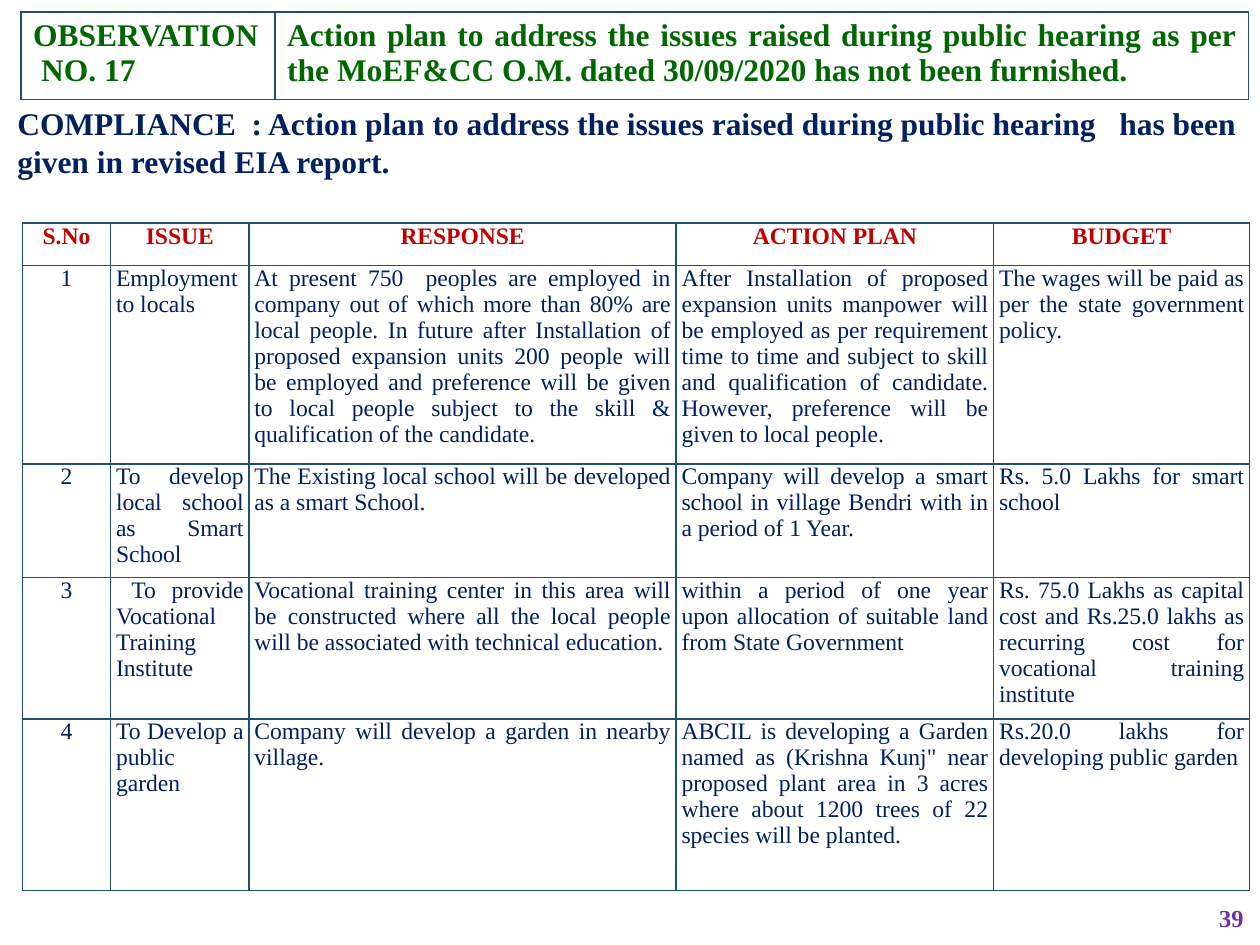
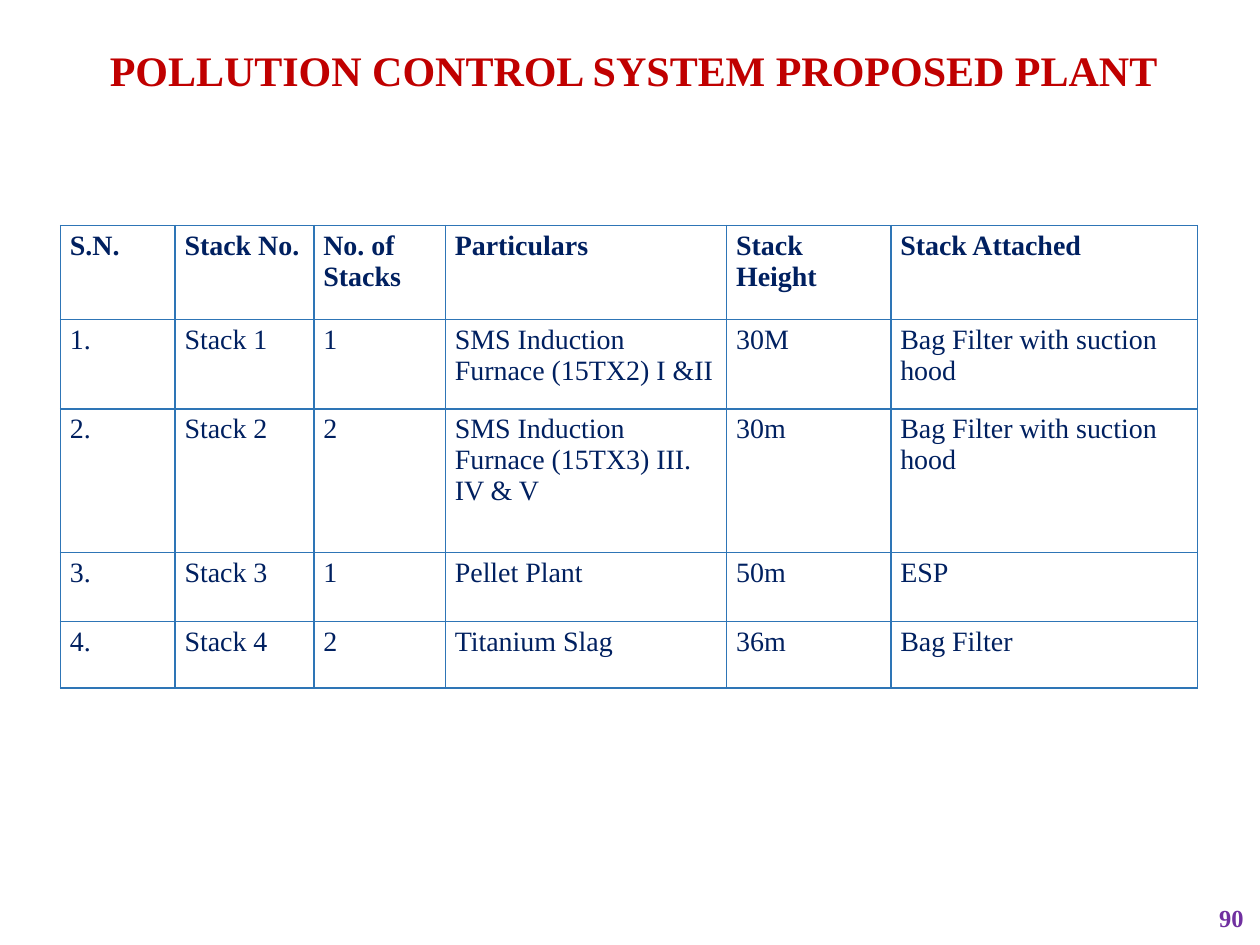
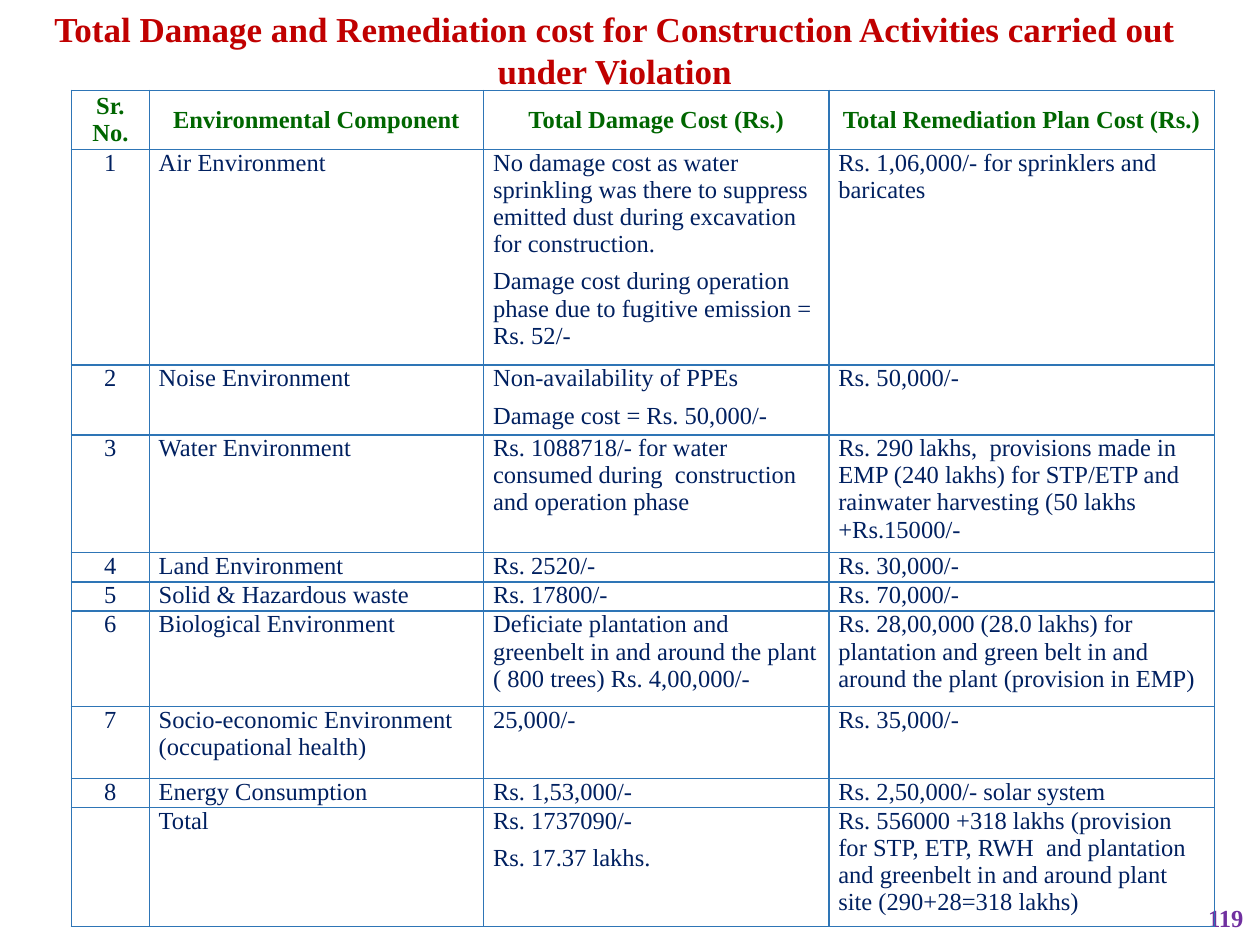
"""Build three slides of an environmental review deck."""
from lxml import etree
from pptx import Presentation
from pptx import util as u
from pptx.dml.color import RGBColor
from pptx.enum import text
from pptx.oxml import ns

FONT = "Times New Roman"
RED = RGBColor(0xC0, 0x00, 0x00)
NAVY = RGBColor(0x00, 0x20, 0x60)
GREEN = RGBColor(0x00, 0x66, 0x00)
PURPLE = RGBColor(0x70, 0x30, 0xA0)
DARK = RGBColor(0x1F, 0x4E, 0x79)
BLUE = RGBColor(0x2E, 0x75, 0xB6)

LEFT = text.PP_ALIGN.LEFT
MID = text.PP_ALIGN.CENTER
RIGHT = text.PP_ALIGN.RIGHT
FULL = text.PP_ALIGN.JUSTIFY

ISSUES = [
    ["S.No", "ISSUE", "RESPONSE", "ACTION PLAN", "BUDGET"],
    ["1", "Employment to locals",
     "At present 750  peoples are employed in company out of which more than 80% are local people. "
     "In future after Installation of proposed expansion units 200 people will be employed and "
     "preference will be given to local people subject to the skill & qualification of the candidate.",
     "After Installation of proposed expansion units manpower will be employed as per requirement "
     "time to time and subject to skill and qualification of candidate. However, preference will be "
     "given to local people.",
     "The wages will be paid as per the state government policy."],
    ["2", "To develop local school as Smart School",
     "The Existing local school will be developed as a smart School.",
     "Company will develop a smart school in village Bendri with in a period of 1 Year.",
     "Rs. 5.0 Lakhs for smart school"],
    ["3", " To provide Vocational Training Institute",
     "Vocational training center in this area will be constructed where all the local people will be "
     "associated with technical education.",
     "within a period of one year upon allocation of suitable land from State Government",
     "Rs. 75.0 Lakhs as capital cost and Rs.25.0 lakhs as recurring cost for vocational training "
     "institute"],
    ["4", "To Develop a public garden",
     "Company will develop a garden in nearby village.",
     "ABCIL is developing a Garden named as (Krishna Kunj\" near proposed plant area in 3 acres where "
     "about 1200 trees of 22 species will be planted.",
     "Rs.20.0 lakhs for developing public garden"],
]

STACKS = [
    ["S.N.", "Stack No.", "No. of Stacks", "Particulars", "Stack Height", "Stack Attached"],
    ["1.", "Stack 1", "1", "SMS Induction Furnace (15TX2) I &II", "30M",
     "Bag Filter with suction hood"],
    ["2.", "Stack 2", "2", "SMS Induction Furnace (15TX3) III. IV & V", "30m",
     "Bag Filter with suction hood"],
    ["3.", "Stack 3", "1", "Pellet Plant", "50m", "ESP"],
    ["4.", "Stack 4", "2", "Titanium Slag", "36m", "Bag Filter"],
]

COSTS = [
    ["Sr. No.", "Environmental Component", "Total Damage Cost (Rs.)",
     "Total Remediation Plan Cost (Rs.)"],
    ["1", "Air Environment",
     "No damage cost as water sprinkling was there to suppress emitted dust during excavation for "
     "construction.\nDamage cost during operation phase due to fugitive emission = Rs. 52/-",
     "Rs. 1,06,000/- for sprinklers and baricates"],
    ["2", "Noise Environment", "Non-availability of PPEs\nDamage cost = Rs. 50,000/-",
     "Rs. 50,000/-"],
    ["3", "Water Environment",
     "Rs. 1088718/- for water consumed during  construction and operation phase",
     "Rs. 290 lakhs,  provisions made in EMP (240 lakhs) for STP/ETP and rainwater harvesting "
     "(50 lakhs +Rs.15000/-"],
    ["4", "Land Environment", "Rs. 2520/-", "Rs. 30,000/-"],
    ["5", "Solid & Hazardous waste", "Rs. 17800/-", "Rs. 70,000/-"],
    ["6", "Biological Environment",
     "Deficiate plantation and greenbelt in and around the plant ( 800 trees) Rs. 4,00,000/-",
     "Rs. 28,00,000 (28.0 lakhs) for plantation and green belt in and around the plant "
     "(provision in EMP)"],
    ["7", "Socio-economic Environment (occupational health)", "25,000/-", "Rs. 35,000/-"],
    ["8", "Energy Consumption", "Rs. 1,53,000/-", "Rs. 2,50,000/- solar system"],
    ["", "Total", "Rs. 1737090/-\nRs. 17.37 lakhs.",
     "Rs. 556000 +318 lakhs (provision for STP, ETP, RWH  and plantation and greenbelt in and "
     "around plant site (290+28=318 lakhs)"],
]


def write(frame, words, size=14, ink=NAVY, bold=False, align=LEFT, gap=0):
    """Fill a text frame, one paragraph for each line of words."""
    frame.word_wrap = True
    for i, line in enumerate(words.split("\n")):
        para = frame.add_paragraph() if i else frame.paragraphs[0]
        para.text = line
        para.alignment = align
        para.space_before = para.space_after = u.Pt(gap)
        for face in [para.font] + [run.font for run in para.runs]:
            face.name, face.size, face.bold = FONT, u.Pt(size), bold
            face.color.rgb = ink


def rule(cell, ink):
    """Draw a thin line on all four sides of a cell."""
    props = cell._tc.get_or_add_tcPr()
    for i, side in enumerate(("lnL", "lnR", "lnT", "lnB")):
        line = etree.Element(ns.qn(f"a:{side}"), w=str(u.Pt(1)))
        fill = etree.SubElement(line, ns.qn("a:solidFill"))
        etree.SubElement(fill, ns.qn("a:srgbClr"), val=str(ink))
        props.insert(i, line)


def grid(slide, spot, widths, heights, rows, line, head, body, pad, first=LEFT):
    """Place a ruled table at a spot, with a format for its head and body rows."""
    left, top = spot
    frame = slide.shapes.add_table(len(rows), len(widths), u.Cm(left), u.Cm(top),
                                   u.Cm(sum(widths)), u.Cm(sum(heights)))
    table = frame.table
    table.first_row = table.horz_banding = False
    for col, width in zip(table.columns, widths):
        col.width = u.Cm(width)
    for i, (row, height) in enumerate(zip(rows, heights)):
        table.rows[i].height = u.Cm(height)
        for j, words in enumerate(row):
            cell = table.cell(i, j)
            cell.fill.background()
            rule(cell, line)
            cell.margin_left = cell.margin_right = u.Cm(pad[0])
            cell.margin_top = cell.margin_bottom = u.Cm(pad[1])
            style = dict(body if i else head)
            if i and j == 0:
                style["align"] = first
            write(cell.text_frame, words, **style)
    return table


def place(shape, box, words, **style):
    """Set a text shape into its box and fill it."""
    shape.left, shape.top, shape.width, shape.height = map(u.Cm, box)
    frame = shape.text_frame
    frame.auto_size = text.MSO_AUTO_SIZE.NONE
    frame.vertical_anchor = text.MSO_ANCHOR.TOP
    write(frame, words, bold=True, **style)


def label(slide, box, words, **style):
    """Add a bold text box."""
    place(slide.shapes.add_textbox(0, 0, 0, 0), box, words, **style)


def start(deck, page, box=None, title="", **style):
    """Add a slide with its page number and, given a box, its red title."""
    slide = deck.slides.add_slide(deck.slide_layouts[5 if box else 6])
    if box:
        place(slide.shapes.title, box, title, ink=RED, **style)
    label(slide, (23.24, 18.08, 2.08, 0.86), page, ink=PURPLE, align=RIGHT)
    return slide


def hearing(deck):
    """Build the slide on the issues of the public hearing."""
    slide = start(deck, "39")
    claim = ["OBSERVATION\v NO. 17",
             "Action plan to address the issues raised during public hearing as per the MoEF&CC "
             "O.M. dated 30/09/2020 has not been furnished."]
    green = dict(size=18, ink=GREEN, bold=True, align=FULL)
    grid(slide, (0.42, 0.24), [5.12, 19.63], [1.77], [claim], DARK, green, green, (0.25, 0.13))
    grid(slide, (0.45, 4.5), [1.78, 2.79, 8.61, 6.4, 5.16], [0.85, 4, 2.29, 2.85, 3.46],
         ISSUES, DARK, dict(size=13.5, ink=RED, bold=True, align=MID),
         dict(size=13.5, align=FULL), (0.11, 0), first=MID)
    label(slide, (0.1, 1.98, 25.4, 1.8),
          "COMPLIANCE  : Action plan to address the issues raised during public hearing   "
          "has been given in revised EIA report.", size=18)


def control(deck):
    """Build the slide on the stacks of the proposed plant."""
    slide = start(deck, "90", (1.96, 0.76, 22.38, 1.27),
                  "POLLUTION CONTROL SYSTEM PROPOSED PLANT", size=24)
    grid(slide, (1.22, 4.55), [2.31, 2.8, 2.65, 5.67, 3.31, 6.18], [1.89, 1.8, 2.9, 1.39, 1.34],
         STACKS, BLUE, dict(size=16, bold=True), dict(size=16), (0.19, 0.1))


def damage(deck):
    """Build the slide on damage and remediation costs."""
    slide = start(deck, "119", (0.15, 0.03, 24.49, 1.96),
                  "Total Damage and Remediation cost for Construction Activities carried out "
                  "under Violation", size=20, align=MID)
    table = grid(slide, (1.44, 1.82), [1.57, 6.74, 6.96, 7.77],
                 [1.19, 4.35, 1.41, 2.37, 0.59, 0.59, 1.92, 1.45, 0.59, 2.4],
                 COSTS, BLUE, dict(ink=GREEN, bold=True, align=MID, gap=3), dict(gap=3),
                 (0.19, 0), first=MID)
    for cell in table.rows[0].cells:
        cell.vertical_anchor = text.MSO_ANCHOR.MIDDLE


def main():
    """Build and save the deck."""
    deck = Presentation()
    deck.slide_width, deck.slide_height = u.Cm(25.4), u.Cm(19.05)
    for build in (hearing, control, damage):
        build(deck)
    deck.save("out.pptx")


if __name__ == "__main__":
    main()
